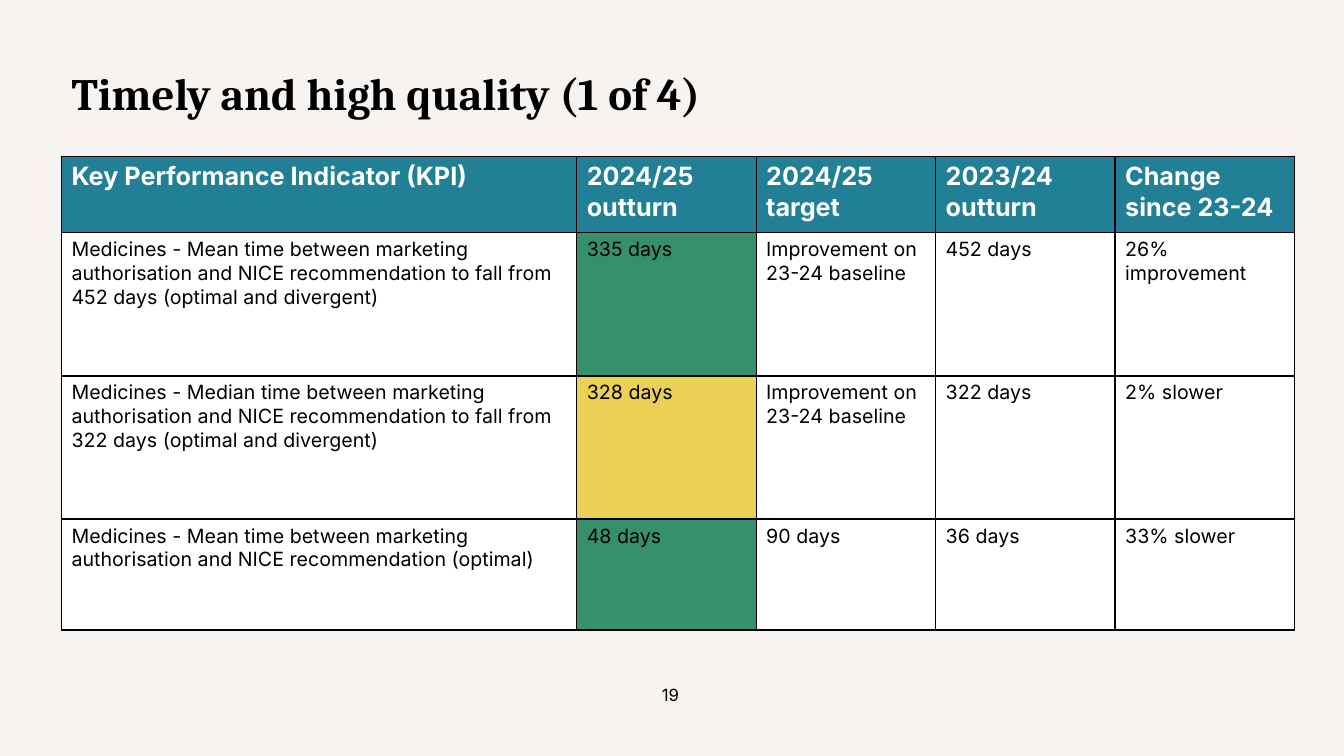
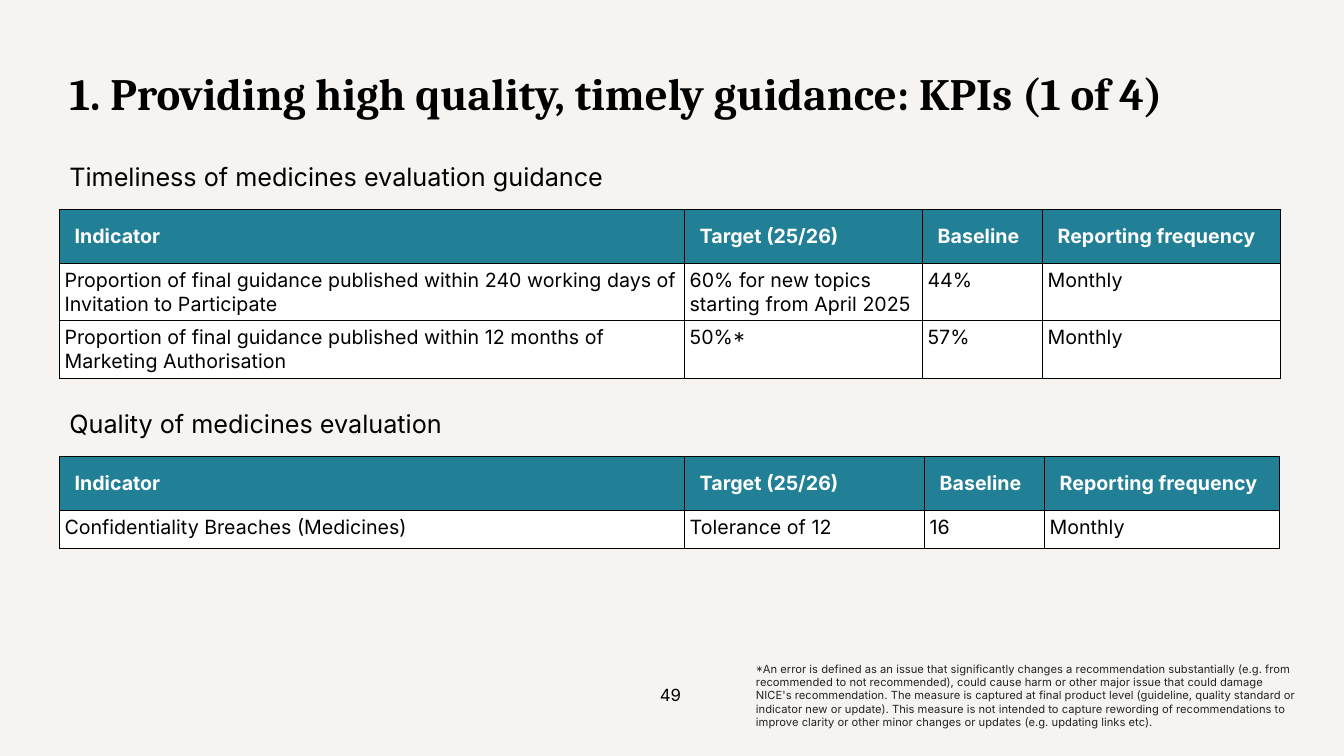
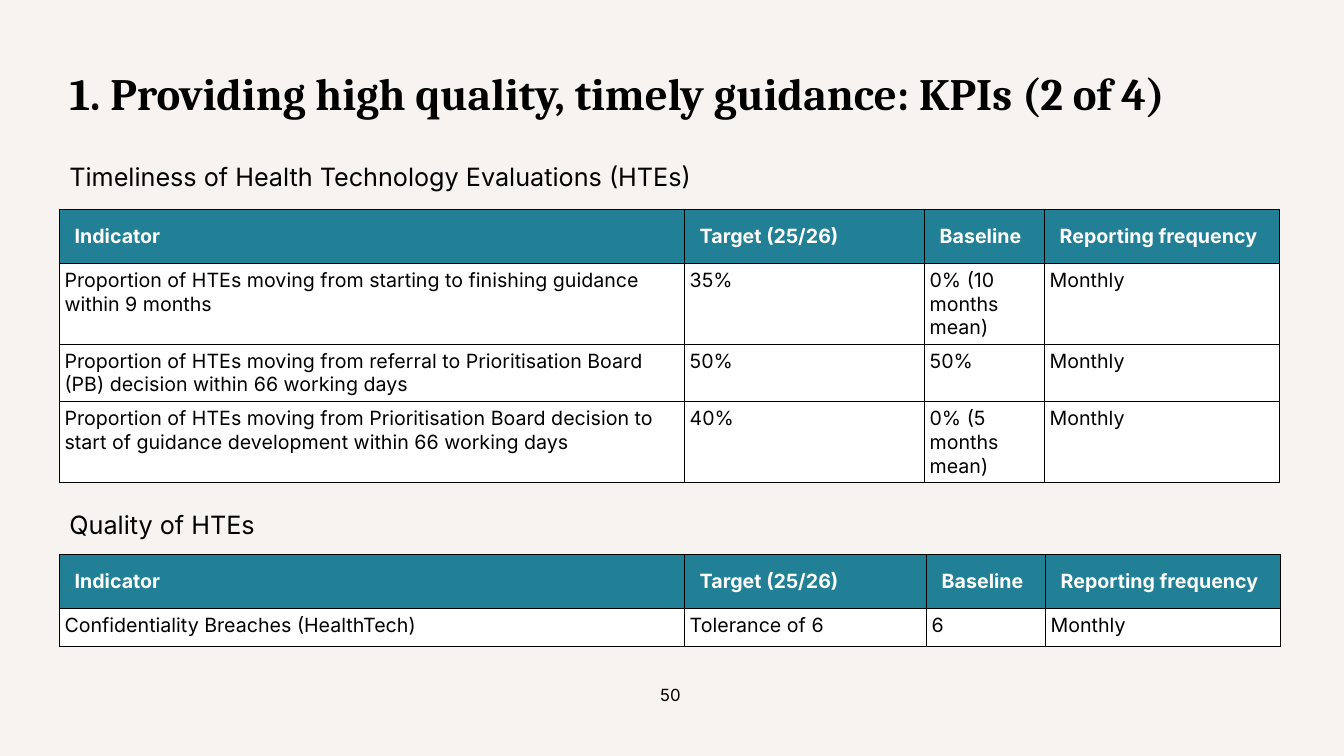
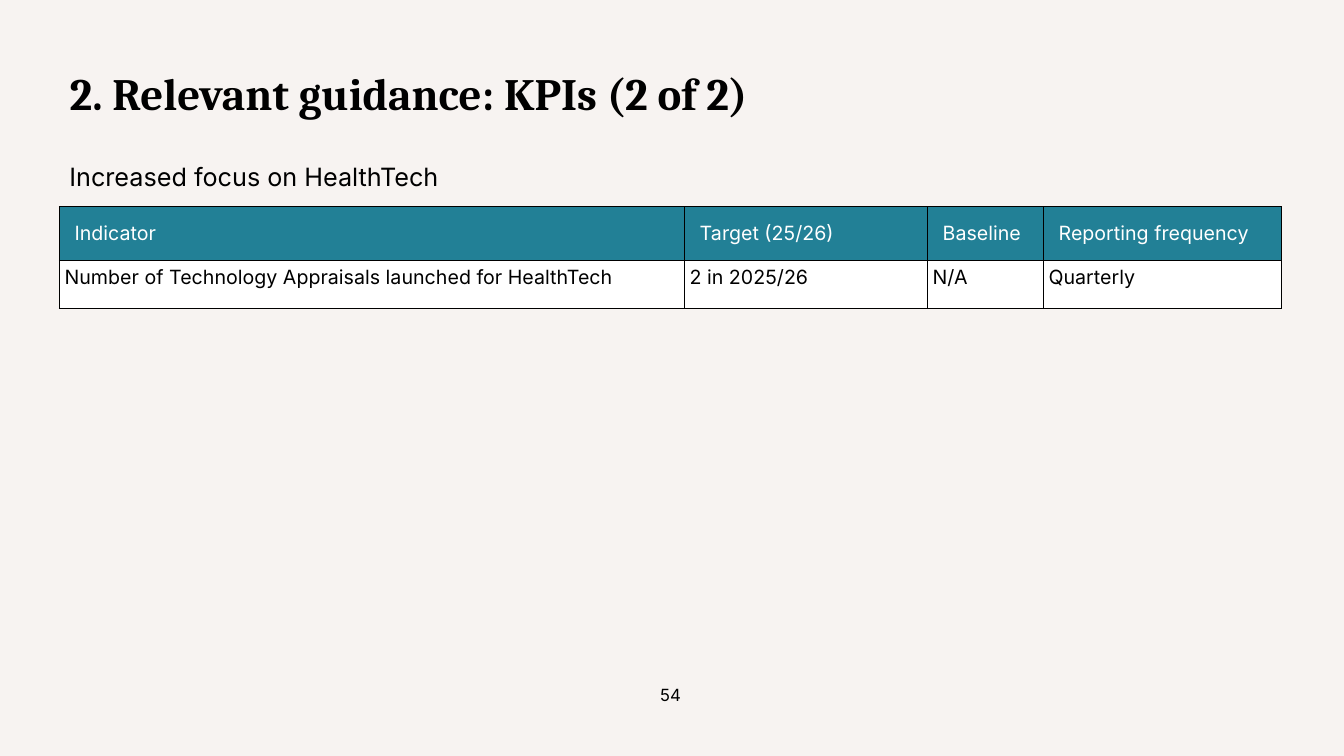
from lxml.etree import SubElement
from pptx import Presentation
from pptx.dml.color import RGBColor
from pptx.enum.text import MSO_ANCHOR as Anchor, MSO_AUTO_SIZE as AutoSize, PP_ALIGN as Align
from pptx.oxml.ns import qn
from pptx.util import Inches, Pt

COLORS = {
    "paper": "F7F3F1",
    "ink": "000000",
    "white": "FFFFFF",
    "teal": "228096",
    "green": "37906D",
    "yellow": "EAD054",
    "note": "242424",
}
FORMATS = {
    "title": {"name": "Cambria", "size": Pt(32), "bold": True},
    "subhead": {"name": "Inter", "size": Pt(18), "bold": False},
    "big_head": {"name": "Inter", "size": Pt(18), "bold": True},
    "head": {"name": "Inter", "size": Pt(14), "bold": True},
    "cell": {"name": "Inter", "size": Pt(14), "bold": False},
    "page": {"name": "Inter", "size": Pt(12), "bold": False},
    "note": {"name": "Inter", "size": Pt(8), "bold": False},
}
MARGINS = ("margin_left", "margin_top", "margin_right", "margin_bottom")
WIDE = (0.1, 0.05, 0.1, 0.05)
LOOSE = (0.15,) * 4
TIGHT = (0.05,) * 4
LEFT = 0.59
HEAD_ROW = 0.53
LINE_ROW = {1: 0.38, 2: 0.57, 3: 0.8}
INDICATOR_HEADS = ("Indicator", "Target (25/26)", "Baseline", "Reporting frequency")


def rgb(name):
    return RGBColor.from_string(COLORS[name])


class Deck:
    def __init__(self):
        self.prs = Presentation()
        self.prs.slide_width = Inches(13.33)
        self.prs.slide_height = Inches(7.5)
        fill = self.prs.slide_master.background.fill
        fill.solid()
        fill.fore_color.rgb = rgb("paper")
        self.s = None

    def put_text(self, tf, text, style, color="ink", align=Align.LEFT):
        p = tf.paragraphs[0]
        p.alignment = align
        r = p.add_run()
        r.text = text
        for key, value in FORMATS[style].items():
            setattr(r.font, key, value)
        r.font.color.rgb = rgb(color)

    def slide(self, title, page, left=LEFT, width=12.11, height=0.85):
        self.s = self.prs.slides.add_slide(self.prs.slide_layouts[5])
        sp = self.s.shapes.title
        sp.left, sp.top = Inches(left), Inches(0.6)
        sp.width, sp.height = Inches(width), Inches(height)
        tf = sp.text_frame
        tf.auto_size = AutoSize.NONE
        tf.vertical_anchor = Anchor.TOP
        self.put_text(tf, title, "title")
        self.text(page, (5.15, 6.74, 3, 0.4), "page", align=Align.CENTER)

    def text(self, text, box, style, color="ink", align=Align.LEFT, anchor=Anchor.TOP):
        tf = self.s.shapes.add_textbox(*map(Inches, box)).text_frame
        tf.word_wrap = True
        tf.vertical_anchor = anchor
        self.put_text(tf, text, style, color, align)

    def subhead(self, text, top):
        self.text(text, (LEFT, top, 6.67, 0.4), "subhead")

    def cell(self, cell, text, style, color, fill, margins):
        for name, value in zip(MARGINS, margins):
            setattr(cell, name, Inches(value))
        tc_pr = cell._tc.get_or_add_tcPr()
        for side in ("L", "R", "T", "B"):
            line = SubElement(tc_pr, qn(f"a:ln{side}"), w=str(Pt(1)))
            solid = SubElement(line, qn("a:solidFill"))
            SubElement(solid, qn("a:srgbClr"), val=COLORS["ink"])
        cell.fill.solid()
        cell.fill.fore_color.rgb = rgb(fill)
        self.put_text(cell.text_frame, text, style, color)

    def table(self, left, top, cols, heights, rows, head="head",
              head_margins=LOOSE, margins=TIGHT, fills=None):
        fills = fills or {}
        frame = self.s.shapes.add_table(
            len(rows), len(cols), Inches(left), Inches(top),
            Inches(sum(cols)), Inches(sum(heights)))
        tbl = frame.table
        tbl.horz_banding = False
        for col, width in zip(tbl.columns, cols):
            col.width = Inches(width)
        for i, (row, height) in enumerate(zip(rows, heights)):
            tbl.rows[i].height = Inches(height)
            for j, text in enumerate(row):
                if i == 0:
                    look = (head, "white", "teal", head_margins)
                else:
                    look = ("cell", "ink", fills.get((i, j), "white"), margins)
                self.cell(tbl.cell(i, j), text, *look)

    def indicators(self, top, cols, lines, rows, head="head"):
        heights = [HEAD_ROW] + [LINE_ROW.get(n, n) for n in lines]
        self.table(LEFT, top, cols, heights, [INDICATOR_HEADS, *rows], head)


def main():
    deck = Deck()

    deck.slide("Timely and high quality (1 of 4)", "19", 0.61, 12.22, 0.95)
    deck.table(
        0.61, 1.55, (5.11,) + (1.78,) * 4, (0.76, 1.42, 1.42, 1.1),
        [
            ("Key Performance Indicator (KPI)", "2024/25 outturn", "2024/25 target",
             "2023/24 outturn", "Change since 23-24"),
            ("Medicines - Mean time between marketing authorisation and NICE "
             "recommendation to fall from 452 days (optimal and divergent)",
             "335 days", "Improvement on 23-24 baseline", "452 days", "26% improvement"),
            ("Medicines - Median time between marketing authorisation and NICE "
             "recommendation to fall from 322 days (optimal and divergent)",
             "328 days", "Improvement on 23-24 baseline", "322 days", "2% slower"),
            ("Medicines - Mean time between marketing authorisation and NICE "
             "recommendation (optimal)",
             "48 days", "90 days", "36 days", "33% slower"),
        ],
        head="big_head", head_margins=WIDE, margins=WIDE,
        fills={(1, 1): "green", (2, 1): "yellow", (3, 1): "green"})

    deck.slide("1. Providing high quality, timely guidance: KPIs (1 of 4)", "49")
    deck.subhead("Timeliness of medicines evaluation guidance", 1.55)
    deck.indicators(2.08, (6.2, 2.36, 1.19, 2.36), (2, 2), [
        ("Proportion of final guidance published within 240 working days of "
         "Invitation to Participate",
         "60% for new topics starting from April 2025", "44%", "Monthly"),
        ("Proportion of final guidance published within 12 months of "
         "Marketing Authorisation", "50%*", "57%", "Monthly"),
    ])
    deck.subhead("Quality of medicines evaluation", 4)
    deck.indicators(4.53, (6.2, 2.38, 1.19, 2.33), (1,), [
        ("Confidentiality Breaches (Medicines)", "Tolerance of 12", "16", "Monthly"),
    ])
    deck.text(
        "*An error is defined as an issue that significantly changes a recommendation "
        "substantially (e.g. from recommended to not recommended), could cause harm or "
        "other major issue that could damage NICE's recommendation. The measure is "
        "captured at final product level (guideline, quality standard or indicator new "
        "or update). This measure is not intended to capture rewording of "
        "recommendations to improve clarity or other minor changes or updates "
        "(e.g. updating links etc).",
        (7.4, 6.57, 5.56, 0.66), "note", "note", anchor=Anchor.MIDDLE)

    deck.slide("1. Providing high quality, timely guidance: KPIs (2 of 4)", "50")
    deck.subhead("Timeliness of Health Technology Evaluations (HTEs)", 1.55)
    deck.indicators(2.08, (6.2, 2.38, 1.19, 2.33), (3, 2, 3), [
        ("Proportion of HTEs moving from starting to finishing guidance within 9 months",
         "35%", "0% (10 months mean)", "Monthly"),
        ("Proportion of HTEs moving from referral to Prioritisation Board (PB) decision "
         "within 66 working days", "50%", "50%", "Monthly"),
        ("Proportion of HTEs moving from Prioritisation Board decision to start of "
         "guidance development within 66 working days",
         "40%", "0% (5 months mean)", "Monthly"),
    ])
    deck.subhead("Quality of HTEs", 5)
    deck.indicators(5.5, (6.2, 2.4, 1.18, 2.33), (1,), [
        ("Confidentiality Breaches (HealthTech)", "Tolerance of 6", "6", "Monthly"),
    ])

    deck.slide("2. Relevant guidance: KPIs (2 of 2)", "54")
    deck.subhead("Increased focus on HealthTech", 1.55)
    deck.indicators(2.05, (6.2, 2.41, 1.15, 2.36), (0.48,), [
        ("Number of Technology Appraisals launched for HealthTech",
         "2 in 2025/26", "N/A", "Quarterly"),
    ], head="cell")

    deck.prs.save("out.pptx")


if __name__ == "__main__":
    main()
